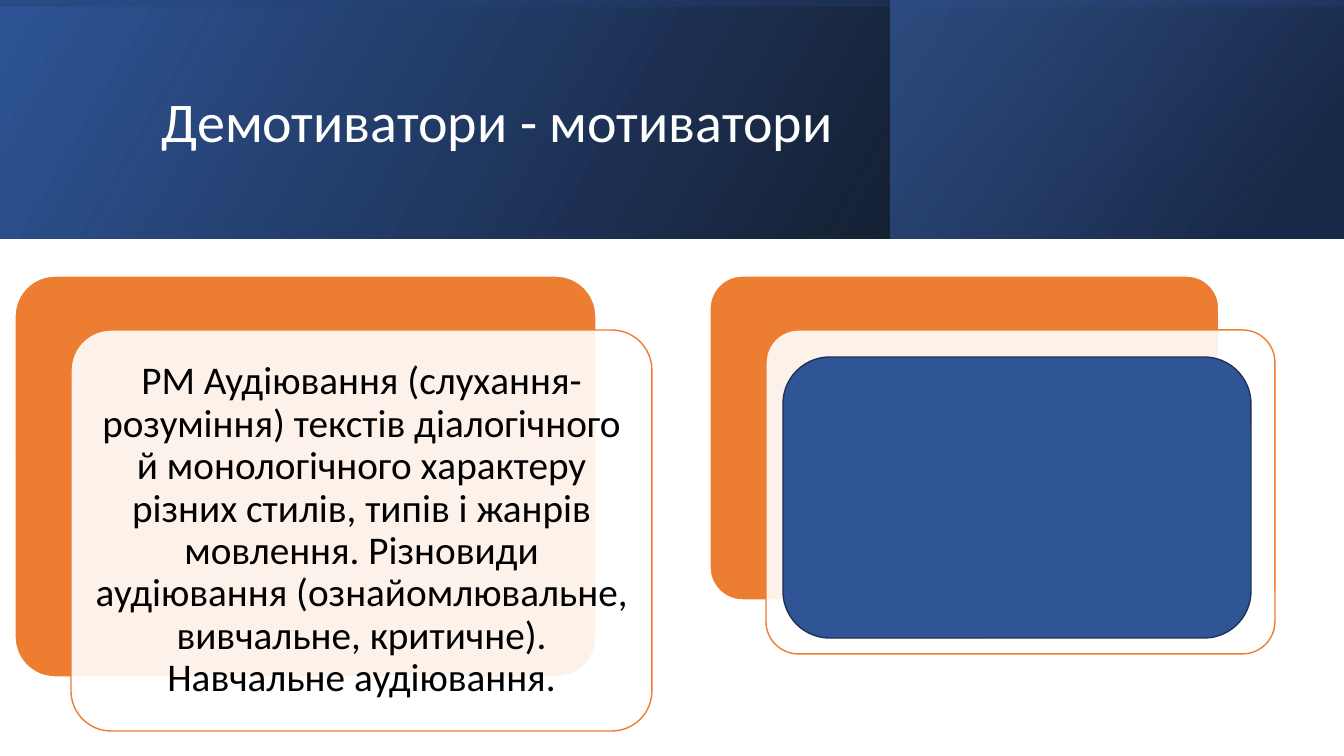
"""Build the slide "Демотиватори - мотиватори" with a gradient banner and two cards."""
from lxml import etree
from pptx import Presentation
from pptx.dml.color import RGBColor
from pptx.enum.shapes import MSO_SHAPE
from pptx.enum.text import MSO_ANCHOR, PP_ALIGN
from pptx.oxml import parse_xml
from pptx.oxml.ns import nsdecls, qn
from pptx.util import Pt

W, H = 1344, 756
BANNER_H = 239
SCALE = 12192000 / W
THEME = {
    "font": "Calibri", "title_size": 40, "body_size": 28,
    "white": "FFFFFF", "black": "000000", "orange": "ED7D31",
    "blue": "2F5597", "outline": "1E3256", "navy": "203864", "sky": "4472C4",
}


def add_box(s, kind, box, fill=None, line=None, radius=None):
    sp = s.shapes.add_shape(kind, *[round(v * SCALE) for v in box])
    sp.shadow.inherit = False
    if fill:
        sp.fill.solid()
        sp.fill.fore_color.rgb = RGBColor.from_string(THEME[fill])
    if line:
        sp.line.color.rgb = RGBColor.from_string(THEME[line])
        sp.line.width = Pt(1)
    else:
        sp.line.fill.background()
    if radius:
        sp.adjustments[0] = radius
    return sp


def add_text(s, text, box, size, color, align=PP_ALIGN.LEFT, inset=(10, 5)):
    tf = s.shapes.add_textbox(*[round(v * SCALE) for v in box]).text_frame
    tf.word_wrap = True
    tf.vertical_anchor = MSO_ANCHOR.MIDDLE
    tf.margin_left = tf.margin_right = round(inset[0] * SCALE)
    tf.margin_top = tf.margin_bottom = round(inset[1] * SCALE)
    p = tf.paragraphs[0]
    p.alignment = align
    p.line_spacing = 0.9
    r = p.add_run()
    r.text = text
    r.font.name = THEME["font"]
    r.font.size = Pt(THEME[size])
    r.font.color.rgb = RGBColor.from_string(THEME[color])


prs = Presentation()
prs.slide_width, prs.slide_height = round(W * SCALE), round(H * SCALE)
s = prs.slides.add_slide(prs.slide_layouts[6])

banner = [
    ((0, 0, W, BANNER_H), 0, 330, [(0, "black", 96), (100, "blue", 100)]),
    ((891, 0, 452, BANNER_H), 0, 320, [(19, "navy", 68), (100, "sky", 48)]),
    (((W - BANNER_H) / 2, (BANNER_H - W) / 2, BANNER_H, W), 270, 350,
     [(23, "blue", 16), (99, "black", 45)]),
]
for box, rotation, angle, stops in banner:
    sp = add_box(s, MSO_SHAPE.RECTANGLE, box)
    sp.rotation = rotation
    spPr = sp._element.spPr
    spPr.find(qn("a:xfrm")).set("flipH", "1")
    grad = parse_xml(f'<a:gradFill {nsdecls("a")} rotWithShape="1"><a:gsLst/>'
                     f'<a:lin ang="{angle * 60000}" scaled="0"/></a:gradFill>')
    for pos, color, alpha in stops:
        gs = etree.SubElement(grad[0], qn("a:gs"), pos=str(pos * 1000))
        clr = etree.SubElement(gs, qn("a:srgbClr"), val=THEME[color])
        etree.SubElement(clr, qn("a:alpha"), val=str(alpha * 1000))
    spPr.find(qn("a:prstGeom")).addnext(grad)

add_text(s, "Демотиватори - мотиватори", (152, 38, 1072, 173), "title_size", "white")

TOP, DX, DY, PAD = 276, 56, 54, 12
cards = [
    (15, 581, 401, "РМ Аудіювання (слухання-розуміння) текстів діалогічного й "
     "монологічного характеру різних стилів, типів і жанрів мовлення. Різновиди "
     "аудіювання (ознайомлювальне, вивчальне, критичне). Навчальне аудіювання."),
    (710, 509, 324, None),
]
for x, w, h, text in cards:
    add_box(s, MSO_SHAPE.ROUNDED_RECTANGLE, (x, TOP, w, h), "orange", "white", 0.1)
    front = add_box(s, MSO_SHAPE.ROUNDED_RECTANGLE, (x + DX, TOP + DY, w, h),
                    "white", "orange", 0.1)
    clr = front._element.spPr.find(qn("a:solidFill"))[0]
    etree.SubElement(clr, qn("a:alpha"), val="90000")
    if text:
        add_text(s, text, (x + DX + PAD, TOP + DY + PAD, w - 2 * PAD, h - 2 * PAD),
                 "body_size", "black", align=PP_ALIGN.CENTER, inset=(PAD, PAD))

add_box(s, MSO_SHAPE.ROUNDED_RECTANGLE, (783, 357, 468, 281), "blue", "outline")

prs.save("out.pptx")
